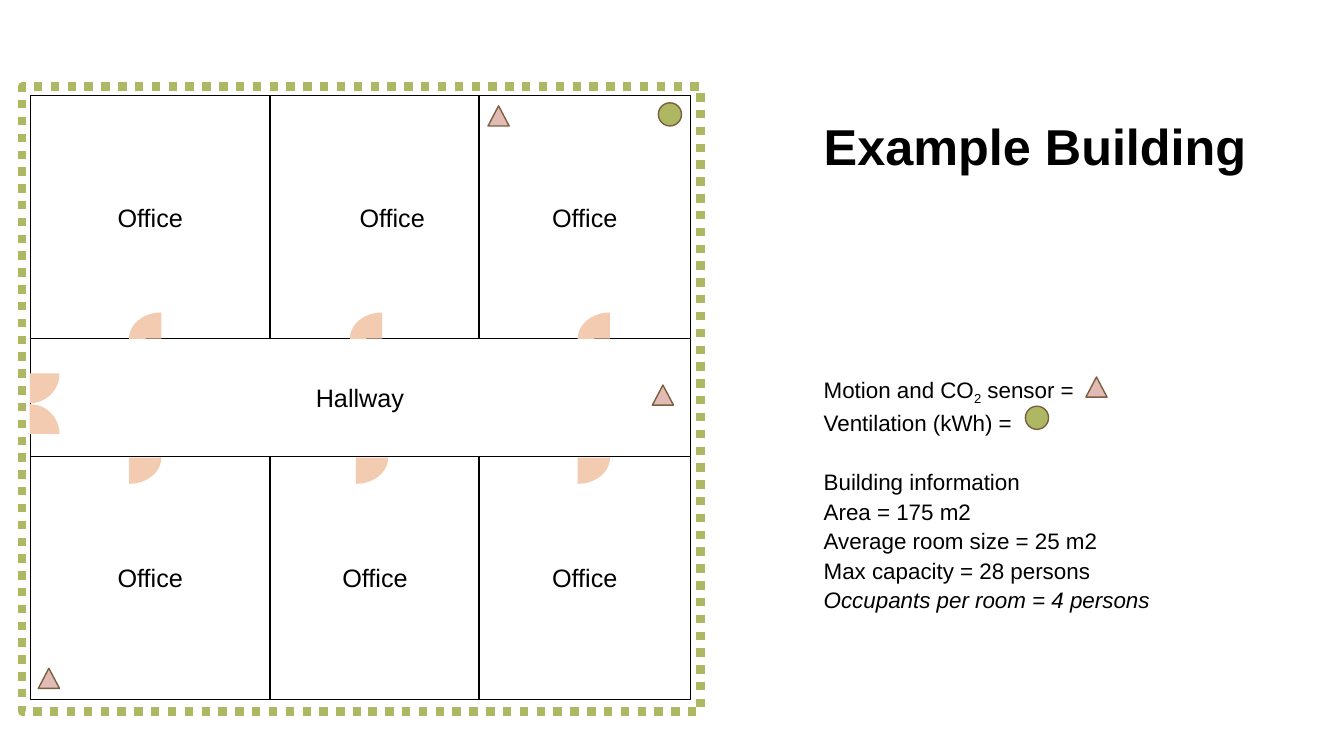
import pptx
import pptx.dml.color
import pptx.enum.dml
import pptx.enum.shapes
import pptx.util

Inches = pptx.util.Inches
Pt = pptx.util.Pt
RGB = pptx.dml.color.RGBColor
SHAPE = pptx.enum.shapes.MSO_SHAPE
CENTER = pptx.enum.text.PP_ALIGN.CENTER

COLORS = {
    "text": "000000",
    "wall": "000000",
    "floor": "FFFFFF",
    "door": "F3CBB1",
    "sensor": "E1BBB4",
    "ventilation": "AEB862",
    "symbol line": "7A6040",
    "boundary": "AEB862",
}

presentation = pptx.Presentation()
presentation.slide_width = Inches(13.33)
presentation.slide_height = Inches(7.5)
slide = presentation.slides.add_slide(presentation.slide_layouts[6])


def add_shape(kind, left, top, width, height, fill=None, line=None, line_width=1):
    shape = slide.shapes.add_shape(
        kind, Inches(left), Inches(top), Inches(width), Inches(height))
    shape.shadow.inherit = False
    if fill:
        shape.fill.solid()
        shape.fill.fore_color.rgb = RGB.from_string(COLORS[fill])
    else:
        shape.fill.background()
    if line:
        shape.line.color.rgb = RGB.from_string(COLORS[line])
        shape.line.width = Pt(line_width)
    else:
        shape.line.fill.background()
    return shape


def add_text(left, top, width, height, lines, size, spacing=None, inset=True):
    box = slide.shapes.add_textbox(
        Inches(left), Inches(top), Inches(width), Inches(height))
    frame = box.text_frame
    frame.word_wrap = True
    if not inset:
        frame.margin_left = frame.margin_right = 0
        frame.margin_top = frame.margin_bottom = 0
    for index, line in enumerate(lines):
        paragraph = frame.paragraphs[0] if index == 0 else frame.add_paragraph()
        paragraph.text = line
        paragraph.font.name = "Arial"
        paragraph.font.size = Pt(size)
        paragraph.font.color.rgb = RGB.from_string(COLORS["text"])
        if spacing:
            paragraph.line_spacing = spacing
    return frame.paragraphs


# Title
title = add_text(8.17, 1.18, 4.27, 1.99, ["Example Building"], 36, 0.97, inset=False)
title[0].font.bold = True

# Legend and building information
information = add_text(8.17, 3.7, 4.27, 2.7, [
    "Motion and CO",
    "Ventilation (kWh) =",
    "Building information",
    "Area = 175 m2",
    "Average room size = 25 m2",
    "Max capacity = 28 persons",
    "Occupants per room = 4 persons",
], 16, 1.1, inset=False)
subscript = information[0].add_run()
subscript.text = "2"
subscript.font._element.set("baseline", "-25000")
information[0].add_run().text = " sensor ="
information[2].space_before = Pt(21)
information[-1].font.italic = True

# Floor and two rows of offices
add_shape(SHAPE.RECTANGLE, 0.3, 0.95, 6.55, 5.98, "floor", "wall")
for top in (0.95, 4.53):
    for left, width in ((0.3, 2.4), (2.68, 2.07), (4.75, 2.1)):
        add_shape(SHAPE.RECTANGLE, left, top, width, 2.41, "floor", "wall")

# Room names
room_names = [("Hallway", 3, 3.74)]
room_names += [("Office", left, 1.96) for left in (0.92, 3.32, 5.23)]
room_names += [("Office", left, 5.53) for left in (0.92, 3.15, 5.23)]
for name, left, top in room_names:
    add_text(left, top, 1.14, 0.4, [name], 18)[0].alignment = CENTER

# Doors: upper offices, lower offices, double entrance
doors = [(left, 3.1, 0.64, 0.52, 0) for left in (1.28, 3.47, 5.73)]
doors += [(left, 4.28, 0.64, 0.52, 180) for left in (0.96, 3.21, 5.41)]
doors += [(0, 3.41, 0.59, 0.59, 180), (0, 4.01, 0.59, 0.59, 90)]
for left, top, width, height, rotation in doors:
    door = add_shape(SHAPE.PIE, left, top, width, height, "door")
    door.adjustments[0] = 107.85
    door.adjustments[1] = 162
    door.rotation = rotation

# Sensors and ventilation, in the plan and in the legend
for left, top in ((4.84, 1.05), (0.38, 6.63), (6.47, 3.82), (10.77, 3.74)):
    add_shape(SHAPE.ISOSCELES_TRIANGLE, left, top, 0.21, 0.2, "sensor", "symbol line")
for left, top in ((6.53, 1.02), (10.17, 4.03)):
    add_shape(SHAPE.OVAL, left, top, 0.23, 0.23, "ventilation", "symbol line")

# Dotted building boundary
boundary = add_shape(SHAPE.RECTANGLE, 0.22, 0.86, 6.73, 6.2, None, "boundary", 6)
boundary.line.dash_style = pptx.enum.dml.MSO_LINE.ROUND_DOT

presentation.save("out.pptx")
